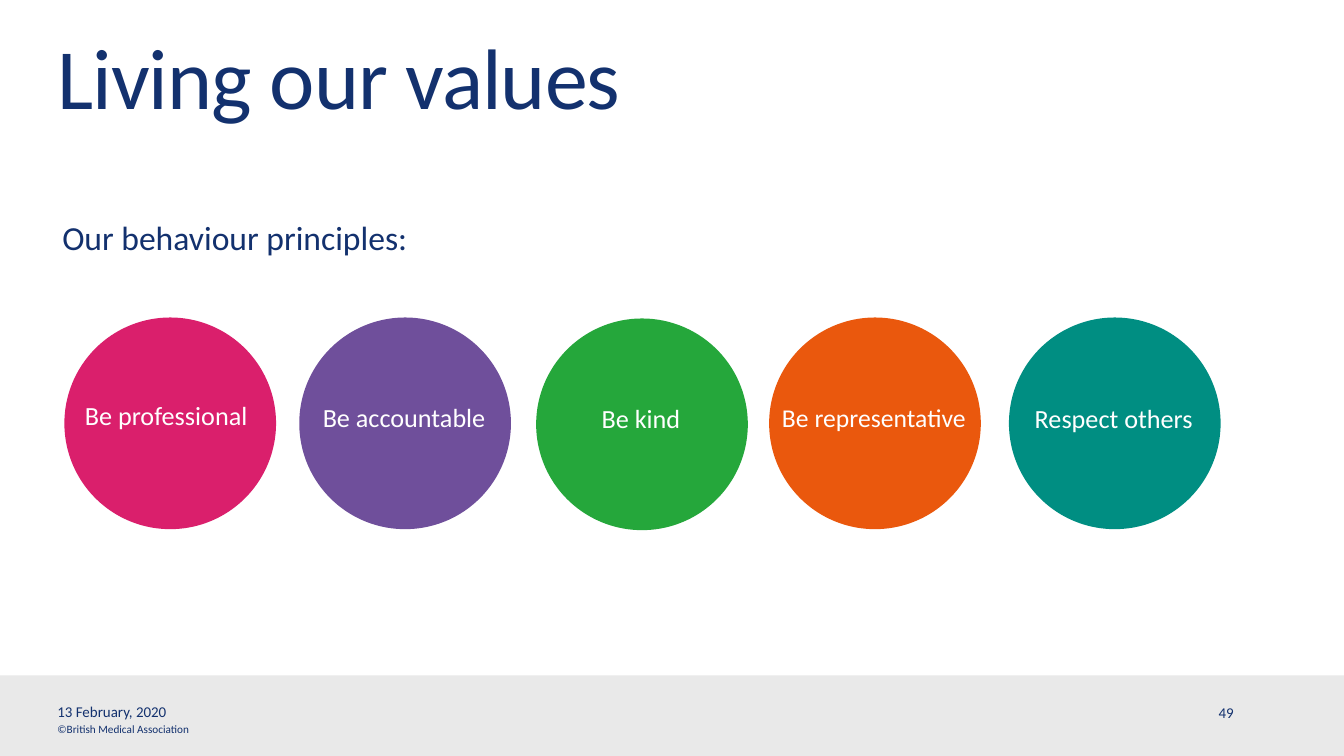
from dataclasses import dataclass

from pptx import Presentation
from pptx.dml.color import RGBColor
from pptx.enum.shapes import MSO_SHAPE as Shape
from pptx.enum.text import MSO_ANCHOR as Anchor, PP_ALIGN as Align
from pptx.util import Pt


@dataclass(frozen=True)
class Theme:
    font: str = "Calibri"
    navy: str = "13316E"
    white: str = "FFFFFF"
    footer_grey: str = "E9E9E9"
    pink: str = "DA1F6C"
    purple: str = "6F4F9B"
    green: str = "25A73B"
    orange: str = "EA580D"
    teal: str = "008E82"
    title_size: float = 61.3
    heading_size: float = 24
    value_size: float = 18.7
    long_value_size: float = 18.3
    footer_size: float = 10.7
    copyright_size: float = 8


THEME = Theme()
CIRCLE_SIZE = 151.2
LABEL_WIDTH = 148.3

# Wording, colour, text size, circle left and top, label top
VALUES = [
    ("Be professional ", THEME.pink, THEME.value_size, 46, 226.8, 281.5),
    ("Be accountable", THEME.purple, THEME.value_size, 213.8, 226.8, 283),
    ("Be kind", THEME.green, THEME.value_size, 383, 227.5, 283.7),
    ("Be representative", THEME.orange, THEME.long_value_size, 549.4, 226.8, 283.7),
    ("Respect others", THEME.teal, THEME.value_size, 720.7, 226.8, 283.7),
]


def add_filled(slide, preset, left, top, width, height, color):
    shape = slide.shapes.add_shape(preset, Pt(left), Pt(top), Pt(width), Pt(height))
    shape.shadow.inherit = False
    shape.fill.solid()
    shape.fill.fore_color.rgb = RGBColor.from_string(color)
    shape.line.fill.background()


def add_text(slide, wording, left, top, width, height, size,
             color=THEME.navy, align=Align.LEFT, anchor=Anchor.TOP, inset=True):
    """Add a one-paragraph text box and return its paragraph."""
    box = slide.shapes.add_textbox(Pt(left), Pt(top), Pt(width), Pt(height))
    frame = box.text_frame
    frame.word_wrap = True
    frame.vertical_anchor = anchor
    if not inset:
        frame.margin_left = frame.margin_right = Pt(0)
        frame.margin_top = frame.margin_bottom = Pt(0)
    paragraph = frame.paragraphs[0]
    paragraph.text = wording
    paragraph.alignment = align
    paragraph.font.name = THEME.font
    paragraph.font.size = Pt(size)
    paragraph.font.color.rgb = RGBColor.from_string(color)
    return paragraph


def add_title(slide, wording):
    title = add_text(slide, wording, 41, 26.6, 566, 85.7, THEME.title_size, inset=False)
    title.line_spacing = Pt(64)
    title.runs[0]._r.get_or_add_rPr().set("spc", "-70")


def add_footer(slide, date, page, copyright_line):
    add_filled(slide, Shape.RECTANGLE, 0, 482.4, 960, 57.6, THEME.footer_grey)
    for wording, left, top, width, height, size in [
        (copyright_line, 41, 516.2, 199.4, 9.4, THEME.copyright_size),
        (date, 41, 501.8, 303.8, 13, THEME.footer_size),
        (page, 870.5, 502.6, 26.6, 13, THEME.footer_size),
    ]:
        add_text(slide, wording, left, top, width, height, size,
                 anchor=Anchor.MIDDLE, inset=False)


def add_value(slide, wording, color, size, left, top, label_top):
    add_filled(slide, Shape.OVAL, left, top, CIRCLE_SIZE, CIRCLE_SIZE, color)
    add_text(slide, wording, left + 0.7, label_top, LABEL_WIDTH, 30, size,
             THEME.white, Align.CENTER)


def main():
    deck = Presentation()
    deck.slide_width, deck.slide_height = Pt(960), Pt(540)
    slide = deck.slides.add_slide(deck.slide_layouts[6])
    add_footer(slide, "13 February, 2020", "49", "©British Medical Association")
    add_title(slide, "Living our values")
    add_text(slide, "Our behaviour principles:", 37.4, 151.2, 373.7, 36, THEME.heading_size)
    for value in VALUES:
        add_value(slide, *value)
    deck.save("out.pptx")


if __name__ == "__main__":
    main()
